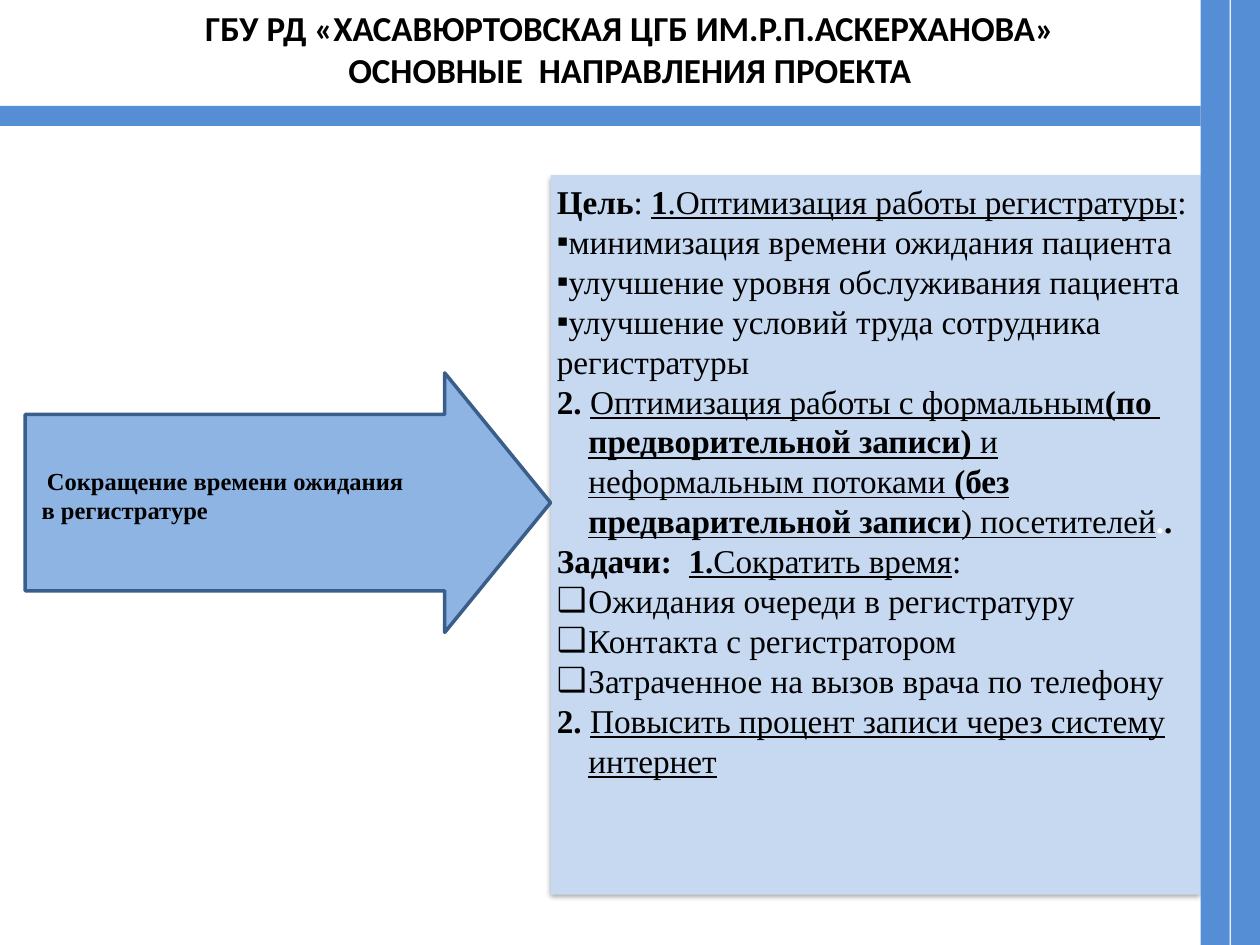
from lxml.etree import SubElement
from pptx import Presentation
from pptx.dml.color import RGBColor
from pptx.enum.shapes import MSO_SHAPE
from pptx.enum.text import MSO_ANCHOR, MSO_AUTO_SIZE, PP_ALIGN
from pptx.oxml import parse_xml
from pptx.oxml.ns import nsdecls, qn
from pptx.util import Inches, Pt

BLACK = RGBColor(0x00, 0x00, 0x00)
WHITE = RGBColor(0xFF, 0xFF, 0xFF)
PANEL_BLUE = RGBColor(0xC6, 0xD9, 0xF1)
BAR_BLUE = RGBColor(0x55, 0x8E, 0xD5)
ARROW_BLUE = RGBColor(0x8E, 0xB4, 0xE3)
ARROW_EDGE = RGBColor(0x3A, 0x5E, 0x8A)
SERIF = "Times New Roman"

# Content
TITLE = ["ГБУ РД «ХАСАВЮРТОВСКАЯ ЦГБ ИМ.Р.П.АСКЕРХАНОВА»",
         "ОСНОВНЫЕ  НАПРАВЛЕНИЯ ПРОЕКТА"]
ARROW_TEXT = [(" ", 12), ("Сокращение времени ожидания в регистратуре", 14)]

# Goals and tasks: (hanging indent, bullet, spans); b bold, u underlined, w white
GOALS = [
    (0, None, [("Цель", "b"), (": ", ""), ("1", "bu"),
               (".Оптимизация работы регистратуры", "u"), (":", "")]),
    (0, "▪", [("минимизация времени ожидания пациента", "")]),
    (0, "▪", [("улучшение уровня обслуживания пациента", "")]),
    (0, "▪", [("улучшение условий труда сотрудника регистратуры", "")]),
    (0.25, None, [("2. ", "b"), ("Оптимизация работы с формальным", "u"),
                  ("(по  предворительной записи)", "bu"),
                  (" и неформальным потоками ", "u"),
                  ("(без предварительной записи", "bu"),
                  (") посетителей", "u"), (".", "bw"), (".", "b")]),
    (0.25, None, [("Задачи:  ", "b"), ("1.", "bu"), ("Сократить время", "u"), (":", "")]),
    (0.25, "❑", [("Ожидания очереди в регистратуру", "")]),
    (0.25, "❑", [("Контакта с регистратором", "")]),
    (0.25, "❑", [("Затраченное на вызов врача по телефону", "")]),
    (0.25, None, [("2. ", "b"), ("Повысить процент записи через систему интернет", "u")]),
]

# Layout in inches: left, top, width, height
TITLE_AREA = (0, 0, 10, 0.77)
PANEL_AREA = (4.37, 1.39, 5.16, 5.71)
LABEL_AREA = (0.28, 3.65, 2.99, 0.57)
BARS = [(9.77, 0, 0.23, 7.5), (9.53, 0, 0.23, 7.5), (0, 0.84, 9.53, 0.16)]
ARROW_LEFT, ARROW_NECK, ARROW_TIP = 0.2, 3.53, 4.37
ARROW_MIDDLE, SHAFT_HALF, HEAD_HALF = 3.99, 0.7, 1.03


def place(shape, area):
    shape.left, shape.top, shape.width, shape.height = map(Inches, area)


def prepare_frame(shape, anchor=MSO_ANCHOR.TOP):
    frame = shape.text_frame
    frame.word_wrap = True
    frame.auto_size = MSO_AUTO_SIZE.NONE
    frame.vertical_anchor = anchor
    frame.margin_left = frame.margin_right = Inches(0.05)
    frame.margin_top = frame.margin_bottom = Inches(0.05)
    return frame


def style_font(font, name, size, bold=True, color=BLACK):
    font.name, font.size, font.bold = name, Pt(size), bold
    font.color.rgb = color


def set_bullet(para, indent, bullet):
    properties = para._p.get_or_add_pPr()
    properties.set("marL", str(Inches(indent)))
    properties.set("indent", str(-Inches(indent)))
    if bullet:
        SubElement(properties, qn("a:buChar")).set("char", bullet)
    else:
        SubElement(properties, qn("a:buNone"))


def add_shadow(shape):
    shape._element.spPr.append(parse_xml(
        f'<a:effectLst {nsdecls("a")}>'
        f'<a:outerShdw blurRad="{Pt(3)}" dist="{Pt(1.8)}" dir="5400000" rotWithShape="0">'
        '<a:srgbClr val="000000"><a:alpha val="35000"/></a:srgbClr>'
        '</a:outerShdw></a:effectLst>'))


deck = Presentation()
deck.slide_width, deck.slide_height = Inches(10), Inches(7.5)
page = deck.slides.add_slide(deck.slide_layouts[1])

# Goals panel
panel = page.placeholders[1]
place(panel, PANEL_AREA)
panel.fill.solid()
panel.fill.fore_color.rgb = PANEL_BLUE
panel.line.fill.background()
add_shadow(panel)
frame = prepare_frame(panel)
for number, (indent, bullet, spans) in enumerate(GOALS):
    para = frame.add_paragraph() if number else frame.paragraphs[0]
    set_bullet(para, indent, bullet)
    para.space_before = Pt(0)
    for text, marks in spans:
        span = para.add_run()
        span.text = text
        style_font(span.font, SERIF, 19, "b" in marks, WHITE if "w" in marks else BLACK)
        span.font.underline = "u" in marks

# Title
title = page.shapes.title
place(title, TITLE_AREA)
frame = prepare_frame(title)
frame.text = "\n".join(TITLE)
for para in frame.paragraphs:
    para.alignment = PP_ALIGN.CENTER
    style_font(para.runs[0].font, "Calibri", 20)

# Frame bars
for area in BARS:
    bar = page.shapes.add_shape(MSO_SHAPE.RECTANGLE, *map(Inches, area))
    bar.shadow.inherit = False
    bar.fill.solid()
    bar.fill.fore_color.rgb = BAR_BLUE
    bar.line.fill.background()

# Arrow pointing at the panel
upper = [(ARROW_LEFT, -SHAFT_HALF), (ARROW_NECK, -SHAFT_HALF), (ARROW_NECK, -HEAD_HALF)]
lower = [(x, -offset) for x, offset in reversed(upper)]
points = [(Inches(x), Inches(ARROW_MIDDLE + offset))
          for x, offset in upper + [(ARROW_TIP, 0)] + lower]
builder = page.shapes.build_freeform(*points[0])
builder.add_line_segments(points[1:], close=True)
arrow = builder.convert_to_shape()
arrow.shadow.inherit = False
arrow.fill.solid()
arrow.fill.fore_color.rgb = ARROW_BLUE
arrow.line.color.rgb = ARROW_EDGE
arrow.line.width = Pt(2)

# Arrow label
label = page.shapes.add_textbox(*map(Inches, LABEL_AREA))
para = prepare_frame(label).paragraphs[0]
for text, size in ARROW_TEXT:
    span = para.add_run()
    span.text = text
    style_font(span.font, SERIF, size)

deck.save("out.pptx")
